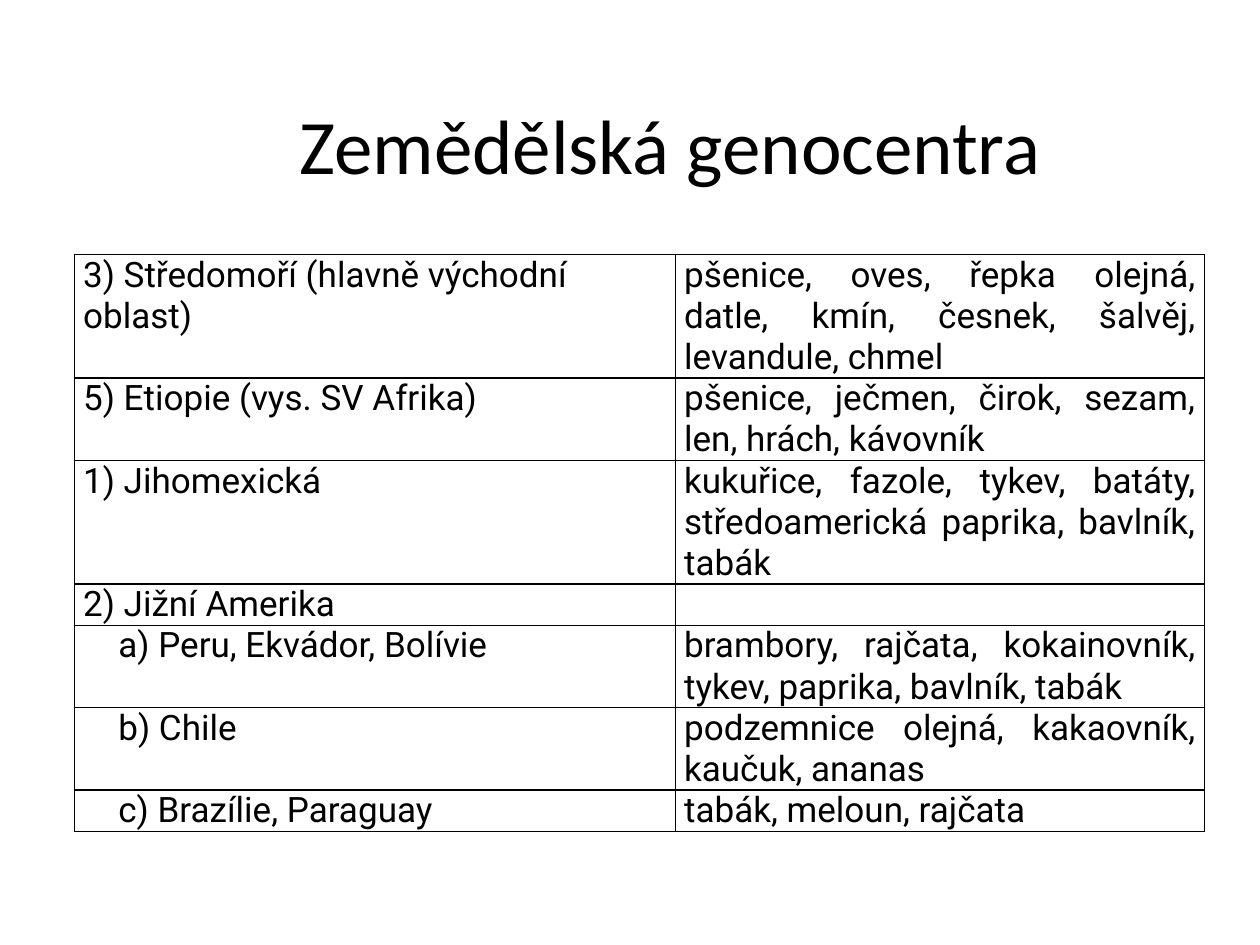
import pptx
import pptx.dml.color
import pptx.enum.text
import pptx.oxml.ns
import pptx.util
from lxml import etree
from pptx.util import Inches, Pt

BLACK = pptx.dml.color.RGBColor(0, 0, 0)
ALIGN = pptx.enum.text.PP_ALIGN
MIDDLE = pptx.enum.text.MSO_ANCHOR.MIDDLE

TITLE = "Zemědělská genocentra"
# region, indent level, crops, lines of text in the row
ROWS = [
    ("3) Středomoří (hlavně východní oblast)", 0,
     "pšenice, oves, řepka olejná, datle, kmín, česnek, šalvěj, levandule, chmel", 3),
    ("5) Etiopie (vys. SV Afrika)", 0,
     "pšenice, ječmen, čirok, sezam, len, hrách, kávovník", 2),
    ("1) Jihomexická", 0,
     "kukuřice, fazole, tykev, batáty, středoamerická paprika, bavlník, tabák", 3),
    ("2) Jižní Amerika", 0, "", 1),
    ("a) Peru, Ekvádor, Bolívie", 1,
     "brambory, rajčata, kokainovník, tykev, paprika, bavlník, tabák", 2),
    ("b) Chile", 1, "podzemnice olejná, kakaovník, kaučuk, ananas", 2),
    ("c) Brazílie, Paraguay", 1, "tabák, meloun, rajčata", 1),
]
COLUMN_WIDTHS = (4.77, 4.2)
LINE_HEIGHT = 0.325
INDENT = 0.28


def write(frame, text, *, font, size, align, level=0):
    para = frame.paragraphs[0]
    para.alignment = align
    if level:
        properties = para._p.get_or_add_pPr()
        properties.set("marL", str(Inches(INDENT * level)))
        properties.set("indent", "0")
    if text:
        span = para.add_run()
        span.text = text
        span.font.name = font
        span.font.size = Pt(size)
        span.font.color.rgb = BLACK


def style_cell(cell):
    """Clear the fill, tighten the margins and draw thin black borders."""
    cell.fill.background()
    cell.margin_left = cell.margin_right = Inches(0.07)
    cell.margin_top = cell.margin_bottom = 0
    properties = cell._tc.get_or_add_tcPr()
    qn = pptx.oxml.ns.qn
    for position, side in enumerate(("lnL", "lnR", "lnT", "lnB")):
        line = etree.Element(qn(f"a:{side}"), w=str(Pt(1)))
        fill = etree.SubElement(line, qn("a:solidFill"))
        etree.SubElement(fill, qn("a:srgbClr"), val=str(BLACK))
        properties.insert(position, line)


def main():
    deck = pptx.Presentation()
    deck.slide_width, deck.slide_height = Inches(10), Inches(7.5)
    page = deck.slides.add_slide(deck.slide_layouts[5])

    title = page.shapes.title
    title.left, title.top = Inches(1.06), Inches(0.34)
    title.width, title.height = Inches(8.52), Inches(1.6)
    title.text_frame.vertical_anchor = MIDDLE
    write(title.text_frame, TITLE, font="Calibri", size=44, align=ALIGN.CENTER)

    height = LINE_HEIGHT * sum(row[3] for row in ROWS)
    table = page.shapes.add_table(
        len(ROWS), len(COLUMN_WIDTHS), Inches(0.59), Inches(2.02),
        Inches(sum(COLUMN_WIDTHS)), Inches(height)).table
    table.first_row = table.horz_banding = False
    for column, width in zip(table.columns, COLUMN_WIDTHS):
        column.width = Inches(width)

    for index, (region, level, crops, lines) in enumerate(ROWS):
        table.rows[index].height = Inches(LINE_HEIGHT * lines)
        region_cell, crops_cell = table.rows[index].cells
        for cell in (region_cell, crops_cell):
            style_cell(cell)
        write(region_cell.text_frame, region, font="Roboto", size=20,
              align=ALIGN.LEFT, level=level)
        write(crops_cell.text_frame, crops, font="Roboto", size=20,
              align=ALIGN.JUSTIFY)

    deck.save("out.pptx")


if __name__ == "__main__":
    main()
